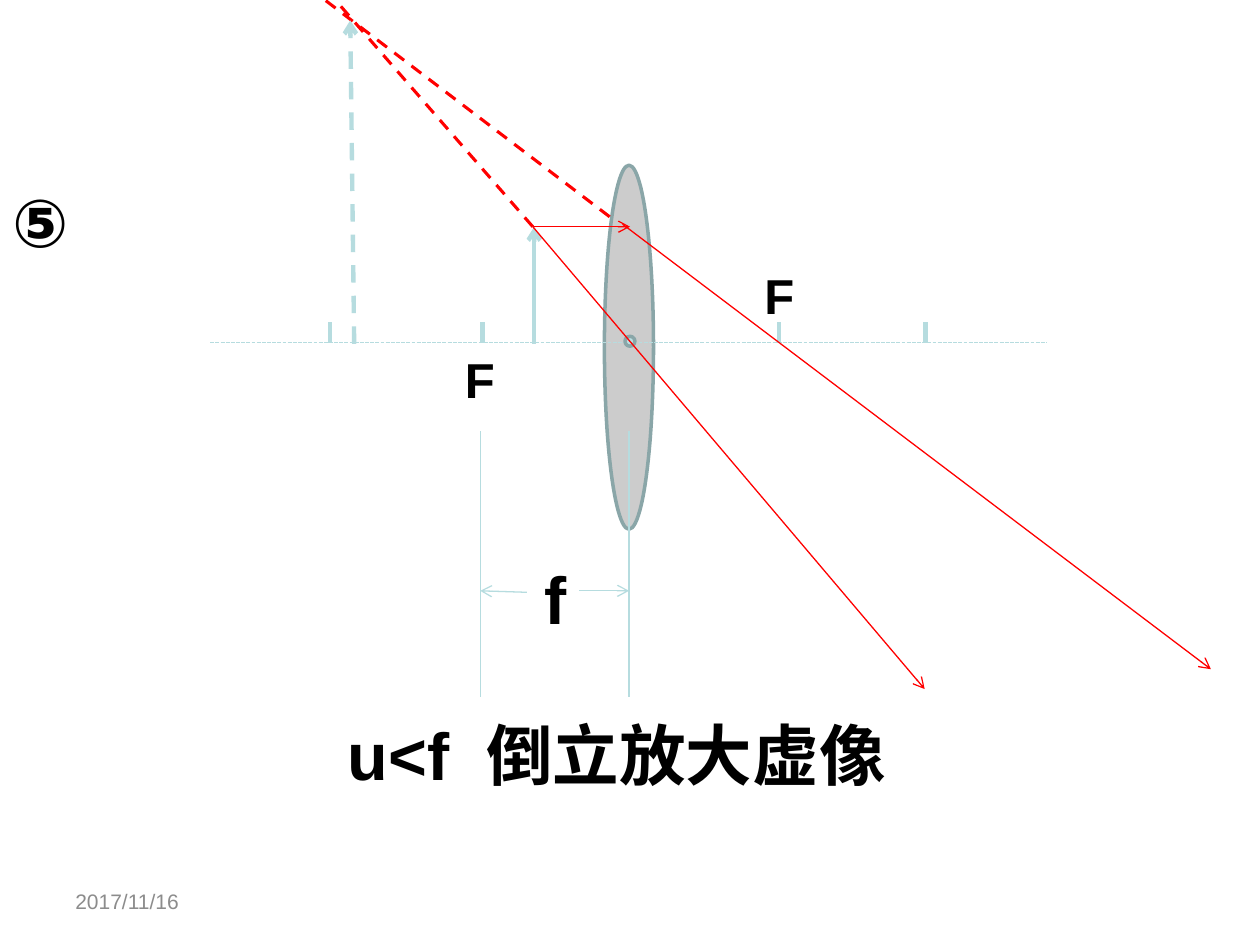
from pptx import Presentation
from pptx.dml.color import RGBColor
from pptx.enum.dml import MSO_LINE_DASH_STYLE as Dash
from pptx.enum.shapes import MSO_CONNECTOR as Connector, MSO_SHAPE as Shape
from pptx.enum.text import MSO_ANCHOR as Anchor, MSO_AUTO_SIZE as AutoSize
from pptx.oxml.ns import qn
from pptx.util import Cm, Pt
from lxml.etree import SubElement

PALE, RAY, RIM = "B6DCDF", "FF0000", "8AA6A8"


def color(hex_code):
    return RGBColor.from_string(hex_code)


def write(frame, text, size=38, fill="000000", bold=True, font="Arial"):
    run = frame.paragraphs[0].add_run()
    run.text = text
    run.font.name = font
    run.font.size = Pt(size)
    run.font.bold = bold
    run.font.color.rgb = color(fill)


class LensDiagram:
    """Draws on one slide; all positions are in centimetres."""

    def __init__(self, slide):
        self.slide = slide

    def label(self, box, text, anchor=Anchor.TOP, wrap=True, **style):
        frame = self.slide.shapes.add_textbox(*map(Cm, box)).text_frame
        frame.word_wrap = wrap
        frame.auto_size = AutoSize.NONE
        frame.vertical_anchor = anchor
        write(frame, text, **style)

    def ellipse(self, center, width, height, fill):
        x, y = center
        box = (x - width / 2, y - height / 2, width, height)
        oval = self.slide.shapes.add_shape(Shape.OVAL, *map(Cm, box))
        oval.shadow.inherit = False
        oval.fill.solid()
        oval.fill.fore_color.rgb = color(fill)
        oval.line.color.rgb = color(RIM)
        oval.line.width = Pt(2)

    def line(self, start, end, stroke=PALE, width=0.75, dash=None, arrow=False):
        link = self.slide.shapes.add_connector(
            Connector.STRAIGHT, *map(Cm, (*start, *end)))
        link.line.color.rgb = color(stroke)
        link.line.width = Pt(width)
        if dash:
            link.line.dash_style = dash
        properties = link._element.spPr
        if arrow:
            SubElement(properties.find(qn("a:ln")), qn("a:tailEnd"), type="arrow")
        SubElement(properties, qn("a:effectLst"))


def main():
    deck = Presentation()
    deck.slide_width, deck.slide_height = Cm(25.4), Cm(19.05)
    blank = deck.slide_layouts[6]
    diagram = LensDiagram(deck.slides.add_slide(blank))

    lens_x, axis_y = 12.68, 6.91
    focus_x = 9.68
    object_tip = (10.74, 4.57)

    diagram.label((1.27, 17.65, 5.92, 1.02), "2017/11/16", anchor=Anchor.MIDDLE,
                  size=12, fill="8C8C8C", bold=False)

    # Lens, optical axis and focal marks
    diagram.ellipse((lens_x, 7), 0.99, 7.34, "CCCCCC")
    diagram.line((4.24, axis_y), (21.11, axis_y), dash=Dash.SQUARE_DOT)
    for tick_x in (6.65, 9.73, 15.7, 18.66):
        diagram.line((tick_x, 6.5), (tick_x, axis_y), width=2.5)
    for focus_label in ((15.16, 5.23), (9.12, 6.93)):
        diagram.label((*focus_label, 0.99, 1.45), "F", size=28)

    # Focal length dimension
    for edge_x in (focus_x, lens_x):
        diagram.line((edge_x, 8.69), (edge_x, 14.05))
    diagram.line((11.68, 11.91), (lens_x, 11.91), arrow=True)
    diagram.line((10.62, 11.94), (focus_x, 11.91), arrow=True)
    diagram.label((10.72, 11.13, 0.97, 1.88), "f", wrap=False)
    diagram.ellipse((12.7, 6.88), 0.2, 0.2, "BBE0E3")

    # Object, rays and virtual image
    diagram.line((10.77, 6.93), (10.77, 4.57), width=2.5, arrow=True)
    for start, end in ((object_tip, (12.7, 4.57)),
                       ((12.55, 4.52), (24.41, 13.49)),
                       (object_tip, (18.64, 13.89))):
        diagram.line(start, end, stroke=RAY, arrow=True)
    for start, end in ((object_tip, (6.76, 0)), ((12.29, 4.37), (6.55, 0))):
        diagram.line(start, end, stroke=RAY, width=1.75, dash=Dash.DASH)
    diagram.line((7.14, 6.93), (7.06, 0.41), width=2.5, dash=Dash.DASH, arrow=True)

    diagram.label((6.76, 14.27, 11.71, 1.88), "u<f  倒立放大虚像")
    diagram.label((0, 3.53, 3.61, 1.85), "⑤")

    deck.save("out.pptx")


if __name__ == "__main__":
    main()
